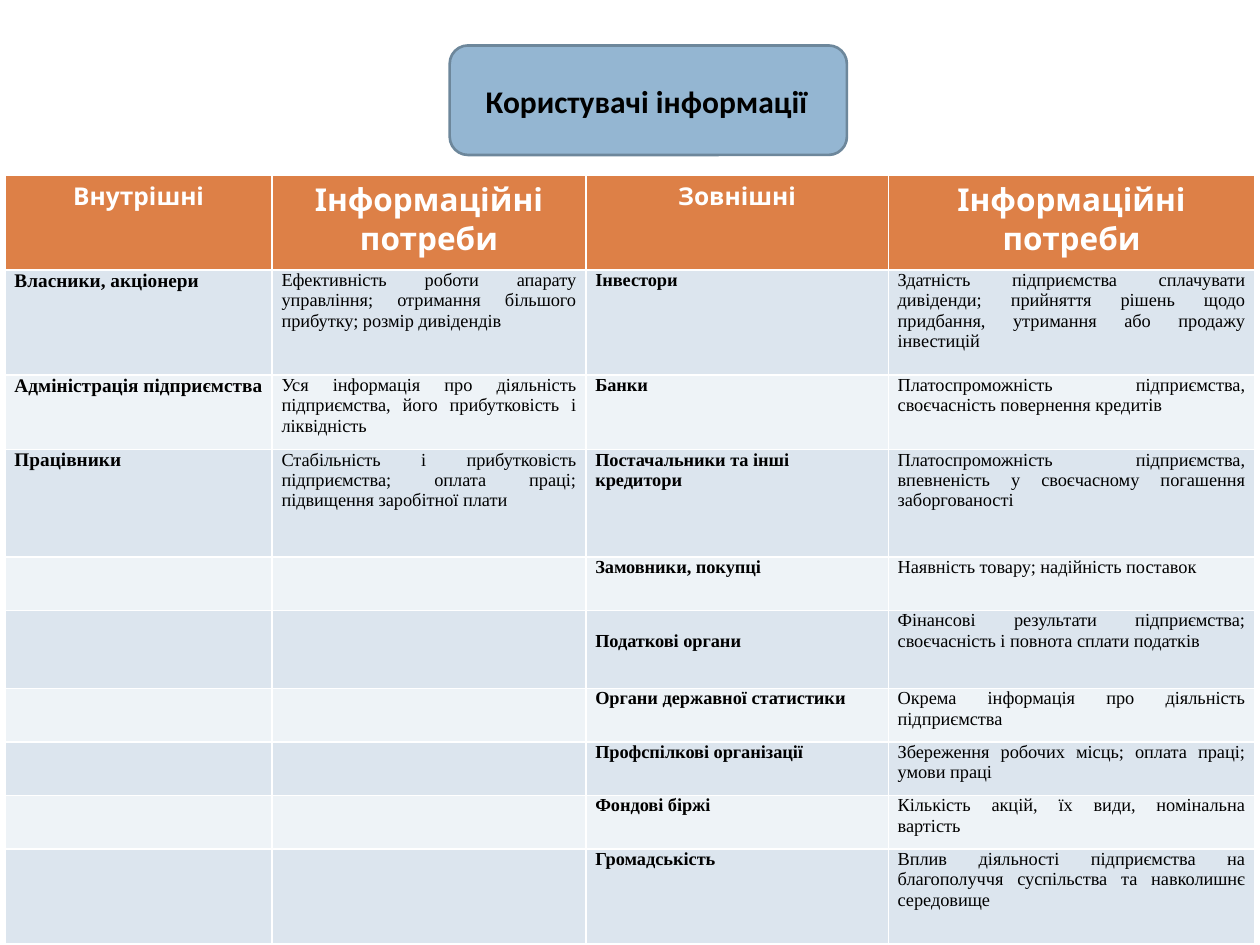
from pptx import Presentation
from pptx.dml.color import RGBColor
from pptx.enum.shapes import MSO_SHAPE as Shape
from pptx.enum.text import MSO_ANCHOR as Anchor, PP_ALIGN as Align
from pptx.util import Pt

SERIF = "Times New Roman"
NEEDS = "Інформаційні потреби"
HEADERS = [("Внутрішні", 14), (NEEDS, 18), ("Зовнішні", 14), (NEEDS, 18)]
INTERNAL = [
    ("Власники, акціонери",
     "Ефективність роботи апарату управління; отримання більшого прибутку; розмір дивідендів"),
    ("Адміністрація підприємства",
     "Уся інформація про діяльність підприємства, його прибутковість і ліквідність"),
    ("Працівники",
     "Стабільність і прибутковість підприємства; оплата праці; підвищення заробітної плати"),
]
EXTERNAL = [
    ("Інвестори",
     "Здатність підприємства сплачувати дивіденди; прийняття рішень щодо придбання, утримання або продажу інвестицій"),
    ("Банки", "Платоспроможність підприємства, своєчасність повернення кредитів"),
    ("Постачальники та інші кредитори",
     "Платоспроможність підприємства, впевненість у своєчасному погашення заборгованості"),
    ("Замовники, покупці", "Наявність товару; надійність поставок"),
    ("Податкові органи", "Фінансові результати підприємства; своєчасність і повнота сплати податків"),
    ("Органи державної статистики", "Окрема інформація про діяльність підприємства"),
    ("Профспілкові організації", "Збереження робочих місць; оплата праці; умови праці"),
    ("Фондові біржі", "Кількість акцій, їх види, номінальна вартість"),
    ("Громадськість",
     "Вплив діяльності підприємства на благополуччя суспільства та навколишнє середовище"),
]
COLUMN_WIDTHS = [152.6, 179.3, 172.8, 209.5]
ROW_HEIGHTS = [54.2, 60.2, 42.6, 61.2, 30.6, 44.6, 30.6, 30.6, 30.6, 54.2]
TAX_ROW = 5


def color(value):
    return RGBColor.from_string(value)


def write(frame, text, size=10.5, font=SERIF, ink="000000", bold=False, align=Align.LEFT):
    paragraph = frame.paragraphs[0]
    paragraph.alignment = align
    run = paragraph.add_run()
    run.text = text
    run.font.size = Pt(size)
    run.font.name = font
    run.font.bold = bold
    run.font.color.rgb = color(ink)


class UsersSlide:
    header_fill = "DD8047"
    band_fills = ("EEF3F7", "DCE5EE")
    title_fill = "94B6D2"
    title_line = "6D879B"

    def __init__(self, deck):
        self.slide = deck.slides.add_slide(deck.slide_layouts[6])

    def panel(self, left, top, width, height):
        panel = self.slide.shapes.add_shape(
            Shape.ROUNDED_RECTANGLE, Pt(left), Pt(top), Pt(width), Pt(height))
        panel.shadow.inherit = False
        panel.fill.solid()
        panel.fill.fore_color.rgb = color(self.title_fill)
        panel.line.color.rgb = color(self.title_line)
        panel.line.width = Pt(1.5)

    def label(self, text, left, top, width, height, **style):
        frame = self.slide.shapes.add_textbox(
            Pt(left), Pt(top), Pt(width), Pt(height)).text_frame
        frame.word_wrap = True
        frame.vertical_anchor = Anchor.MIDDLE
        write(frame, text, **style)

    def grid(self, left, top, widths, heights):
        table = self.slide.shapes.add_table(
            len(heights), len(widths), Pt(left), Pt(top),
            Pt(sum(widths)), Pt(sum(heights))).table
        for column, width in zip(table.columns, widths):
            column.width = Pt(width)
        for index, (row, height) in enumerate(zip(table.rows, heights)):
            row.height = Pt(height)
            for cell in row.cells:
                cell.fill.solid()
                fill = self.band_fills[index % 2] if index else self.header_fill
                cell.fill.fore_color.rgb = color(fill)
                if index:
                    cell.margin_left = cell.margin_right = Pt(5.4)
                    cell.margin_top = cell.margin_bottom = Pt(0)
        return table

    def users(self, table, pairs, column, name_size):
        for row, (name, needs) in enumerate(pairs, 1):
            write(table.cell(row, column).text_frame, name, size=name_size, bold=True)
            write(table.cell(row, column + 1).text_frame, needs, align=Align.JUSTIFY)


def main():
    deck = Presentation()
    deck.slide_width, deck.slide_height = Pt(720), Pt(540)
    page = UsersSlide(deck)

    table = page.grid(2.9, 100, COLUMN_WIDTHS, ROW_HEIGHTS)
    for column, (header, size) in enumerate(HEADERS):
        write(table.cell(0, column).text_frame, header, size=size, font="Cabin",
              ink="FFFFFF", bold=True, align=Align.CENTER)
    page.users(table, INTERNAL, 0, 11)
    page.users(table, EXTERNAL, 2, 10.5)
    table.cell(TAX_ROW, 2).margin_top = Pt(12)

    page.panel(257, 26, 227, 62.6)
    page.label("Користувачі інформації", 256, 43, 227, 29, size=18,
               font="Calibri", bold=True, align=Align.CENTER)
    deck.save("out.pptx")


if __name__ == "__main__":
    main()
